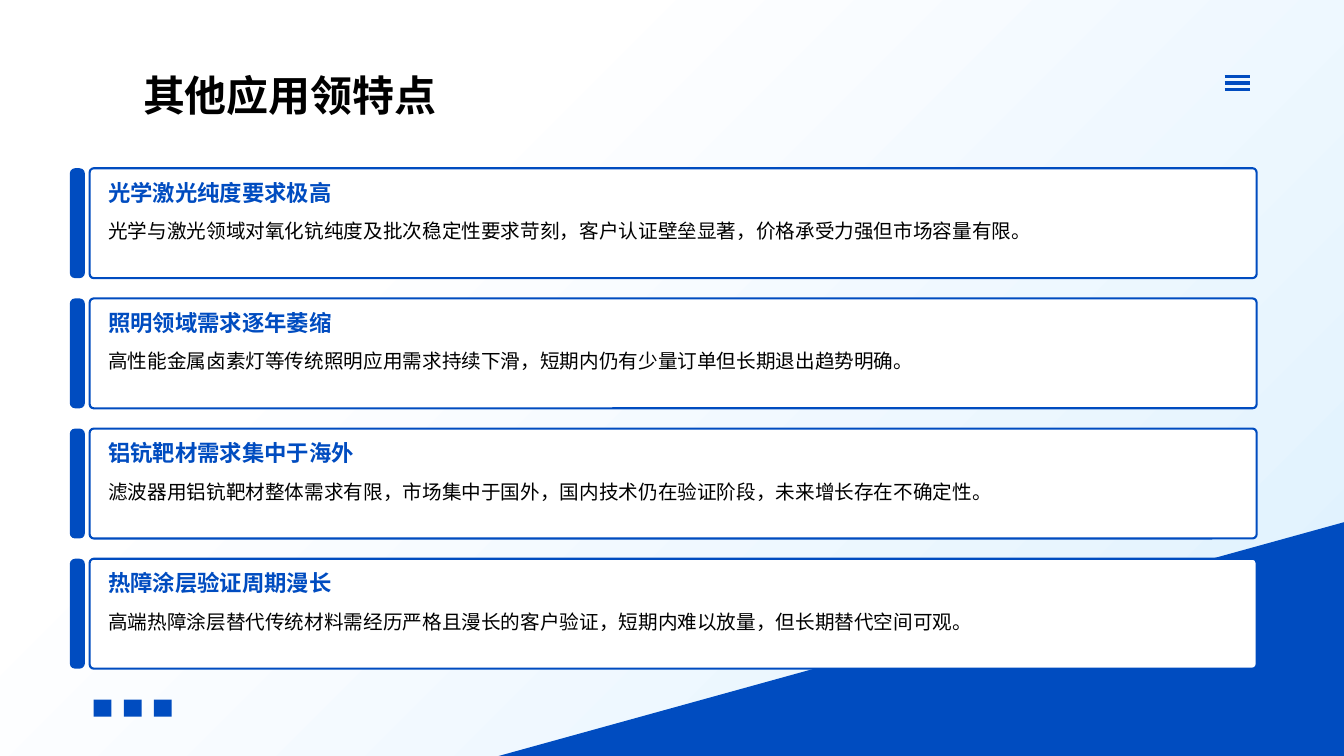
from lxml.etree import SubElement
from pptx import Presentation
from pptx.dml.color import RGBColor
from pptx.enum.lang import MSO_LANGUAGE_ID
from pptx.enum.shapes import MSO_CONNECTOR, MSO_SHAPE
from pptx.enum.text import MSO_ANCHOR, MSO_AUTO_SIZE, PP_ALIGN
from pptx.oxml import parse_xml
from pptx.oxml.ns import nsdecls, qn
from pptx.util import Cm, Pt

TITLE = "其他应用领特点"
CARDS = [
    ("光学激光纯度要求极高",
     "光学与激光领域对氧化钪纯度及批次稳定性要求苛刻，客户认证壁垒显著，价格承受力强但市场容量有限。"),
    ("照明领域需求逐年萎缩",
     "高性能金属卤素灯等传统照明应用需求持续下滑，短期内仍有少量订单但长期退出趋势明确。"),
    ("铝钪靶材需求集中于海外",
     "滤波器用铝钪靶材整体需求有限，市场集中于国外，国内技术仍在验证阶段，未来增长存在不确定性。"),
    ("热障涂层验证周期漫长",
     "高端热障涂层替代传统材料需经历严格且漫长的客户验证，短期内难以放量，但长期替代空间可观。"),
]
FONT = "Karla"
BLUE, WHITE, BLACK = "004CC0", "FFFFFF", "000000"
BACKGROUND = [(0, WHITE), (28, WHITE), (100, "DDF0FE")]
WIDTH, HEIGHT = 33.87, 19.05
CARD_TOP, CARD_PITCH, CARD_HEIGHT = 4.24, 3.28, 2.77


def color(value):
    return RGBColor.from_string(value)


def set_background(slide):
    stops = "".join(
        f'<a:gs pos="{pos * 1000}"><a:srgbClr val="{value}"/></a:gs>'
        for pos, value in BACKGROUND)
    slide.background.fill.solid()
    bg_pr = slide.background._cSld.bg.bgPr
    bg_pr.replace(bg_pr[0], parse_xml(
        f'<a:gradFill {nsdecls("a")} rotWithShape="1"><a:gsLst>{stops}</a:gsLst>'
        '<a:lin ang="2700000" scaled="0"/></a:gradFill>'))


def add_box(slide, kind, box, fill=BLUE, line=None, radius=None):
    sp = slide.shapes.add_shape(kind, *map(Cm, box))
    sp.shadow.inherit = False
    sp.fill.solid()
    sp.fill.fore_color.rgb = color(fill)
    if line:
        sp.line.color.rgb = color(line)
        sp.line.width = Pt(1.5)
    else:
        sp.line.fill.background()
    if radius is not None:
        sp.adjustments[0] = radius
    return sp


def set_text(sp, text, size, value, bold=False, align=PP_ALIGN.JUSTIFY,
             anchor=MSO_ANCHOR.TOP, spacing=1.0):
    tf = sp.text_frame
    tf.text = text
    tf.word_wrap = True
    tf.auto_size = MSO_AUTO_SIZE.SHAPE_TO_FIT_TEXT
    tf.vertical_anchor = anchor
    p = tf.paragraphs[0]
    p.alignment = align
    p.line_spacing = spacing
    font = p.runs[0].font
    font.name = FONT
    font.size = Pt(size)
    font.bold = bold
    font.color.rgb = color(value)
    font.language_id = MSO_LANGUAGE_ID.SIMPLIFIED_CHINESE


def add_text(slide, box, *args, **kwargs):
    set_text(slide.shapes.add_textbox(*map(Cm, box)), *args, **kwargs)


def add_title(slide):
    sp = slide.shapes.title
    sp.left, sp.top, sp.width, sp.height = map(Cm, (3.35, 1.63, 28.19, 1.52))
    set_text(sp, TITLE, 30, BLACK, bold=True, align=PP_ALIGN.LEFT)


def add_decoration(slide):
    for i in range(3):
        add_box(slide, MSO_SHAPE.RECTANGLE, (2.36 + i * 0.76, 17.63, 0.45, 0.43))
        y = Cm(1.93 + i * 0.165)
        line = slide.shapes.add_connector(
            MSO_CONNECTOR.STRAIGHT, Cm(30.86), y, Cm(31.5), y)
        line.line.color.rgb = color(BLUE)
        line.line.width = Pt(2.5)
        SubElement(line._element.spPr, qn("a:effectLst"))
    left, top = 12.57, 13.16
    corner = add_box(slide, MSO_SHAPE.RIGHT_TRIANGLE,
                     (left, top, WIDTH - left, HEIGHT - top))
    corner._element.spPr.find(qn("a:xfrm")).set("flipH", "1")


def add_card(slide, top, heading, body):
    add_box(slide, MSO_SHAPE.ROUNDED_RECTANGLE,
            (1.76, top, 0.38, CARD_HEIGHT), radius=0.348)
    add_box(slide, MSO_SHAPE.ROUNDED_RECTANGLE,
            (2.26, top, 29.41, CARD_HEIGHT), WHITE, BLUE, 0.038)
    add_text(slide, (2.48, top + 0.14, 28.96, 0.94), heading, 16, BLUE,
             bold=True, anchor=MSO_ANCHOR.MIDDLE)
    add_text(slide, (2.48, top + 0.98, 28.96, 1.07), body, 14, BLACK, spacing=1.3)


def main():
    prs = Presentation()
    prs.slide_width, prs.slide_height = Cm(WIDTH), Cm(HEIGHT)
    s = prs.slides.add_slide(prs.slide_layouts[5])
    set_background(s)
    add_title(s)
    add_decoration(s)
    for i, (heading, body) in enumerate(CARDS):
        add_card(s, CARD_TOP + i * CARD_PITCH, heading, body)
    prs.save("out.pptx")


if __name__ == "__main__":
    main()
